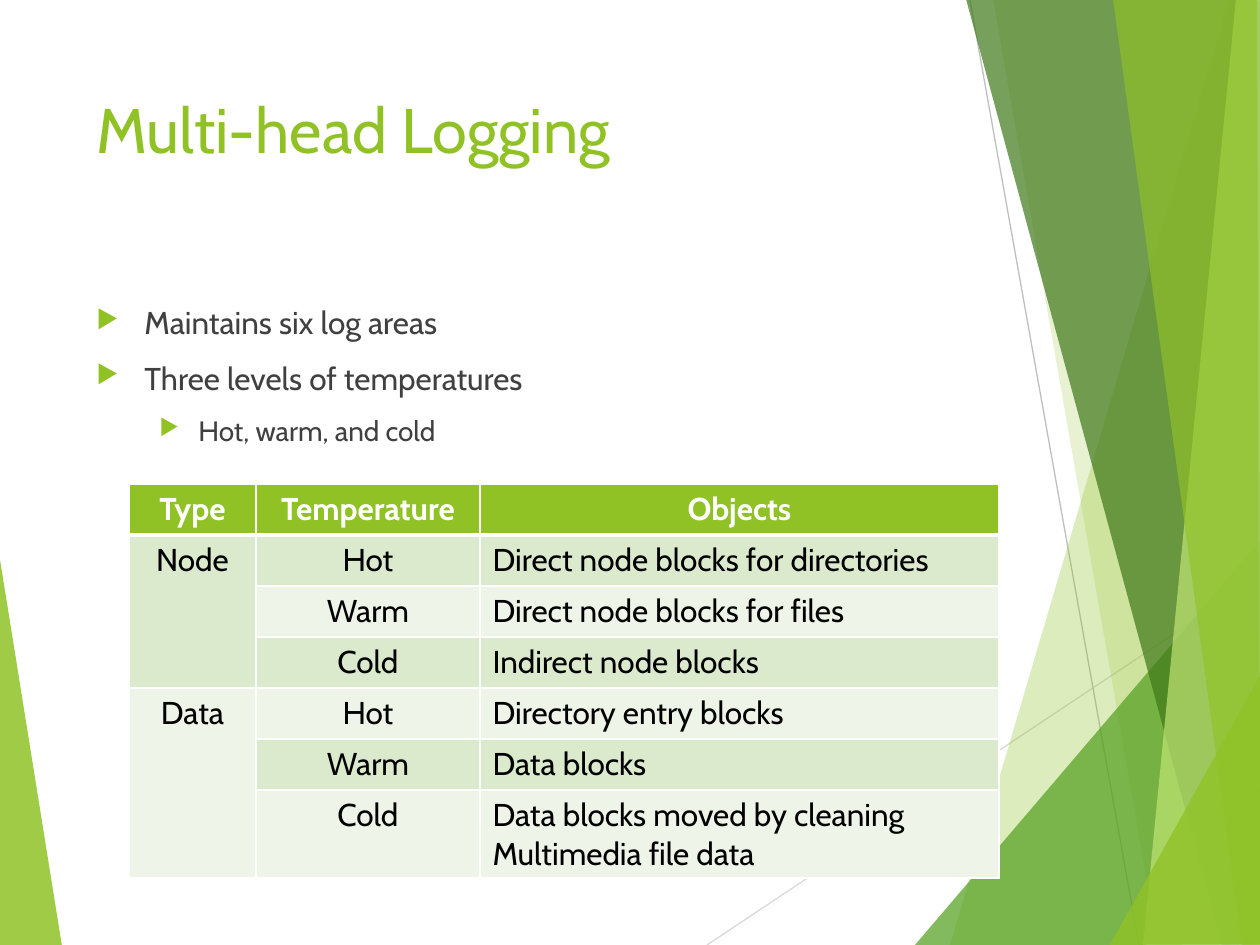
from lxml import etree
from pptx import Presentation
from pptx.dml.color import RGBColor
from pptx.enum.shapes import MSO_CONNECTOR
from pptx.enum.text import MSO_ANCHOR, PP_ALIGN
from pptx.oxml.ns import qn
from pptx.util import Emu, Pt

STRAIGHT = MSO_CONNECTOR.STRAIGHT
TOP = MSO_ANCHOR.TOP
LEFT, CENTER = PP_ALIGN.LEFT, PP_ALIGN.CENTER

EMU_PER_PX = 914400 / 126
SLIDE_W, SLIDE_H = 1260, 945

LIME = RGBColor(0x90, 0xC2, 0x26)
GREEN = RGBColor(0x54, 0xA0, 0x21)
FOREST = RGBColor(0x3F, 0x78, 0x19)
PALE_LIME = RGBColor(0xC0, 0xE4, 0x74)
LIGHT_GREY = RGBColor(0xD9, 0xD9, 0xD9)
MID_GREY = RGBColor(0xBF, 0xBF, 0xBF)
DARK_GREY = RGBColor(0x40, 0x40, 0x40)
BAND_DARK = RGBColor(0xDB, 0xE9, 0xCD)
BAND_LIGHT = RGBColor(0xEE, 0xF4, 0xE8)
WHITE = RGBColor(0xFF, 0xFF, 0xFF)
BLACK = RGBColor(0, 0, 0)

# Corner points, colour, opacity in percent; from back to front
LEFT_SHARD = ([(-1, 553), (62, 946), (-1, 945)], LIME, 85)
RIGHT_SHARDS = [
    ([(1229, 0), (950, 945), (1262, 946), (1261, 1)], LIME, 30),
    ([(993, -1), (1158, 945), (1261, 945), (1261, -1)], LIME, 20),
    ([(915, 945), (1260, 541), (1261, 945)], GREEN, 72),
    ([(966, -1), (1222, 945), (1261, 944), (1261, -1)], FOREST, 70),
    ([(1236, -1), (1143, 945), (1261, 945), (1260, -1)], PALE_LIME, 70),
    ([(1113, -1), (1242, 945), (1260, 945), (1257, -1)], LIME, 65),
    ([(1110, 945), (1261, 674), (1261, 944)], LIME, 80),
]
RAYS = [((707, 945), (1261, 576), LIGHT_GREY), ((970, 0), (1139, 945), MID_GREY)]

BULLETS = [("Maintains six log areas", 0), ("Three levels of temperatures", 0),
           ("Hot, warm, and cold", 1)]
BULLET_LEVELS = [(48, 48, 18), (102, 39, 16)]  # margin, hanging, point size

LOG_AREAS = [
    ("Type", "Temperature", "Objects"),
    ("Node", "Hot", "Direct node blocks for directories"),
    ("", "Warm", "Direct node blocks for files"),
    ("", "Cold", "Indirect node blocks"),
    ("Data", "Hot", "Directory entry blocks"),
    ("", "Warm", "Data blocks"),
    ("", "Cold", "Data blocks moved by cleaning\nMultimedia file data"),
]
TYPE_SPANS = [(1, 3), (4, 6)]


def px(length):
    return Emu(round(length * EMU_PER_PX))


def add_xml(parent, tag, **attributes):
    return etree.SubElement(parent, qn(tag), attributes)


class SlideBuilder:
    font = "Cabin"

    def __init__(self, slide):
        self.slide = slide

    def style(self, paragraph, size, color, bold=False):
        for run in paragraph.runs:
            run.font.name = self.font
            run.font.size = Pt(size)
            run.font.bold = bold
            run.font.color.rgb = color

    def shard(self, points, color, opacity):
        builder = self.slide.shapes.build_freeform(*points[0], scale=EMU_PER_PX)
        builder.add_line_segments(points[1:], close=True)
        shape = builder.convert_to_shape()
        shape.shadow.inherit = False
        shape.line.fill.background()
        shape.fill.solid()
        shape.fill.fore_color.rgb = color
        for srgb in shape.fill._xPr.iter(qn("a:srgbClr")):
            add_xml(srgb, "a:alpha", val=str(opacity * 1000))

    def ray(self, start, end, color):
        line = self.slide.shapes.add_connector(
            STRAIGHT, *(px(v) for v in (*start, *end)))
        line.line.color.rgb = color
        line.line.width = Pt(0.75)
        add_xml(line._element.spPr, "a:effectLst")

    def text_frame(self, left, top, width, height):
        box = self.slide.shapes.add_textbox(*map(px, (left, top, width, height)))
        frame = box.text_frame
        frame.word_wrap = True
        frame.vertical_anchor = TOP
        return frame

    def title(self, text, *box):
        frame = self.text_frame(*box)
        frame.text = text
        self.style(frame.paragraphs[0], 36, LIME)

    def bullets(self, items, *box):
        frame = self.text_frame(*box)
        frame.text = "\n".join(text for text, _ in items)
        for paragraph, (_, level) in zip(frame.paragraphs, items):
            margin, hanging, size = BULLET_LEVELS[level]
            paragraph.level = level
            paragraph.space_before = Pt(10)
            self.style(paragraph, size, DARK_GREY)
            props = paragraph._p.get_or_add_pPr()
            props.set("marL", str(px(margin)))
            props.set("indent", str(px(-hanging)))
            add_xml(add_xml(props, "a:buClr"), "a:srgbClr", val=str(LIME))
            add_xml(props, "a:buSzPct", val="80000")
            add_xml(props, "a:buChar", char="▶")

    def borders(self, cell, top, bottom):
        """Draw white borders; top and bottom are widths in points."""
        props = cell._tc.get_or_add_tcPr()
        for side, width in (("L", 1), ("R", 1), ("T", top), ("B", bottom)):
            line = add_xml(props, f"a:ln{side}", w=str(Pt(width)))
            add_xml(add_xml(line, "a:solidFill"), "a:srgbClr", val=str(WHITE))

    def table(self, rows, spans, left, top, widths, row_height):
        table = self.slide.shapes.add_table(
            len(rows), len(widths), px(left), px(top),
            px(sum(widths)), px(row_height * len(rows))).table
        for column, width in zip(table.columns, widths):
            column.width = px(width)
        for r, row in enumerate(rows):
            header = r == 0
            band = LIME if header else BAND_DARK if r % 2 else BAND_LIGHT
            for c, text in enumerate(row):
                cell = table.cell(r, c)
                self.borders(cell, 3 if r == 1 else 1, 3 if header else 1)
                cell.fill.solid()
                cell.fill.fore_color.rgb = band
                cell.text_frame.text = text
                for paragraph in cell.text_frame.paragraphs:
                    paragraph.alignment = CENTER if header or c < 2 else LEFT
                    self.style(paragraph, 18, WHITE if header else BLACK, header)
        for first, last in spans:
            table.cell(first, 0).merge(table.cell(last, 0))


def main():
    deck = Presentation()
    deck.slide_width, deck.slide_height = px(SLIDE_W), px(SLIDE_H)
    page = SlideBuilder(deck.slides.add_slide(deck.slide_layouts[6]))
    page.shard(*LEFT_SHARD)
    for ray in RAYS:
        page.ray(*ray)
    for shard in RIGHT_SHARDS:
        page.shard(*shard)
    page.title("Multi-head Logging", 84, 84, 874, 181)
    page.bullets(BULLETS, 84, 297, 874, 534)
    page.table(LOG_AREAS, TYPE_SPANS, 129, 484, (127, 224, 519), 51)
    deck.save("out.pptx")


if __name__ == "__main__":
    main()
